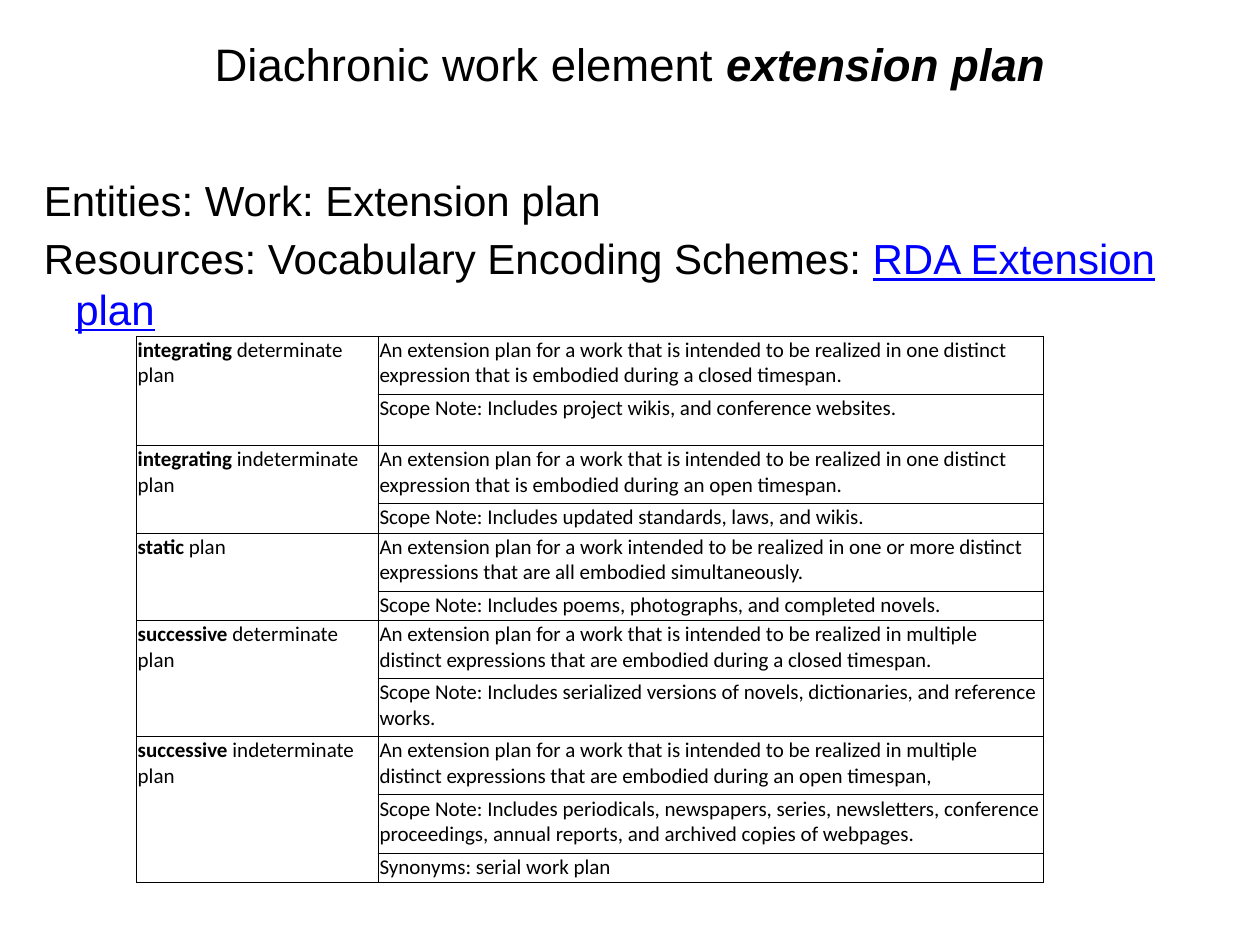
from lxml.etree import SubElement
from pptx import Presentation
from pptx.dml.color import RGBColor
from pptx.enum.text import MSO_ANCHOR as ANCHOR, PP_ALIGN as ALIGN
from pptx.oxml import parse_xml
from pptx.oxml.ns import nsdecls, qn
from pptx.util import Pt

COLORS = {"text": "000000", "link": "0000FF", "border": "000000", "page": "FFFFFF"}
STANDARD_ROW, TALL_ROW, SHORT_ROW = 33.2, 29.5, 16.8

# Each plan: bold word, remainder, [(description, row height), ...]
PLANS = [
    ("integrating", " determinate plan", [
        ("An extension plan for a work that is intended to be realized in one distinct "
         "expression that is embodied during a closed timespan.", STANDARD_ROW),
        ("Scope Note: Includes project wikis, and conference websites.", TALL_ROW)]),
    ("integrating", " indeterminate plan", [
        ("An extension plan for a work that is intended to be realized in one distinct "
         "expression that is embodied during an open timespan.", STANDARD_ROW),
        ("Scope Note: Includes updated standards, laws, and wikis.", SHORT_ROW)]),
    ("static", " plan", [
        ("An extension plan for a work intended to be realized in one or more distinct "
         "expressions that are all embodied simultaneously.", STANDARD_ROW),
        ("Scope Note: Includes poems, photographs, and completed novels.", SHORT_ROW)]),
    ("successive", " determinate plan", [
        ("An extension plan for a work that is intended to be realized in multiple "
         "distinct expressions that are embodied during a closed timespan.", STANDARD_ROW),
        ("Scope Note: Includes serialized versions of novels, dictionaries, and "
         "reference works.", STANDARD_ROW)]),
    ("successive", " indeterminate plan", [
        ("An extension plan for a work that is intended to be realized in multiple "
         "distinct expressions that are embodied during an open timespan,", STANDARD_ROW),
        ("Scope Note: Includes periodicals, newspapers, series, newsletters, conference "
         "proceedings, annual reports, and archived copies of webpages.", STANDARD_ROW),
        ("Synonyms: serial work plan", SHORT_ROW)]),
]


class SlideBuilder:
    def __init__(self, slide):
        self.s = slide
        self.heading_font, self.table_font = "Arial", "Calibri"
        self.table_size, self.border_width = 12, 0.5
        fill = slide.background.fill
        fill.solid()
        fill.fore_color.rgb = RGBColor.from_string(COLORS["page"])

    def run(self, p, text, font, size, color="text", **style):
        r = p.add_run()
        r.text = text
        r.font.name, r.font.size = font, Pt(size)
        r.font.color.rgb = RGBColor.from_string(COLORS[color])
        for name, value in style.items():
            setattr(r.font, name, value)

    def text(self, box, paragraphs, size, anchor=ANCHOR.TOP, align=ALIGN.LEFT,
             hanging=0, space_before=0):
        """Paragraphs are lists of (text, style) runs."""
        tf = self.s.shapes.add_textbox(*map(Pt, box)).text_frame
        tf.word_wrap, tf.vertical_anchor = True, anchor
        for i, runs in enumerate(paragraphs):
            p = tf.add_paragraph() if i else tf.paragraphs[0]
            p.alignment, p.space_before = align, Pt(space_before)
            if hanging:
                props = p._p.get_or_add_pPr()
                props.set("marL", str(Pt(hanging)))
                props.set("indent", str(-Pt(hanging)))
            for text, style in runs:
                self.run(p, text, self.heading_font, size, **style)

    def cell(self, cell, runs):
        cell.margin_left = cell.margin_right = cell.margin_top = Pt(0.7)
        cell.margin_bottom = Pt(0)
        cell.fill.background()
        props = cell._tc.get_or_add_tcPr()
        for i, side in enumerate("LRTB"):
            props.insert(i, parse_xml(
                f'<a:ln{side} {nsdecls("a")} w="{Pt(self.border_width)}"><a:solidFill>'
                f'<a:srgbClr val="{COLORS["border"]}"/></a:solidFill></a:ln{side}>'))
        p = cell.text_frame.paragraphs[0]
        for text, bold in runs:
            self.run(p, text, self.table_font, self.table_size, bold=bold)
        if not runs:  # keeps a merged-away cell from stretching its row
            SubElement(p._p, qn("a:endParaRPr"), sz=str(self.table_size * 100))

    def plan_table(self, left, top, widths, plans):
        heights = [h for plan in plans for _, h in plan[2]]
        table = self.s.shapes.add_table(
            len(heights), len(widths), Pt(left), Pt(top),
            Pt(sum(widths)), Pt(sum(heights))).table
        table.first_row = table.horz_banding = False
        for column, width in zip(table.columns, widths):
            column.width = Pt(width)
        for row, height in zip(table.rows, heights):
            row.height = Pt(height)
        first = 0
        for kind, rest, details in plans:
            for i, (description, _) in enumerate(details):
                label = [] if i else [(kind, True), (rest, False)]
                self.cell(table.cell(first + i, 0), label)
                self.cell(table.cell(first + i, 1), [(description, False)])
            last = first + len(details) - 1
            table.cell(first, 0).merge(table.cell(last, 0))
            first = last + 1


def main():
    prs = Presentation()
    prs.slide_width, prs.slide_height = Pt(720), Pt(540)
    builder = SlideBuilder(prs.slides.add_slide(prs.slide_layouts[6]))
    builder.text((0, 0, 720, 72), [[
        ("Diachronic work element ", {}),
        ("extension plan", {"bold": True, "italic": True})]],
        26, ANCHOR.MIDDLE, ALIGN.CENTER)
    builder.text((18, 96, 684, 432), [
        [("Entities: Work: Extension plan", {})],
        [("Resources: Vocabulary Encoding Schemes: ", {}),
         ("RDA Extension plan", {"color": "link", "underline": True})]],
        24, hanging=18, space_before=4.8)
    builder.plan_table(78, 192, (138.2, 380.2), PLANS)
    prs.save("out.pptx")


if __name__ == "__main__":
    main()
